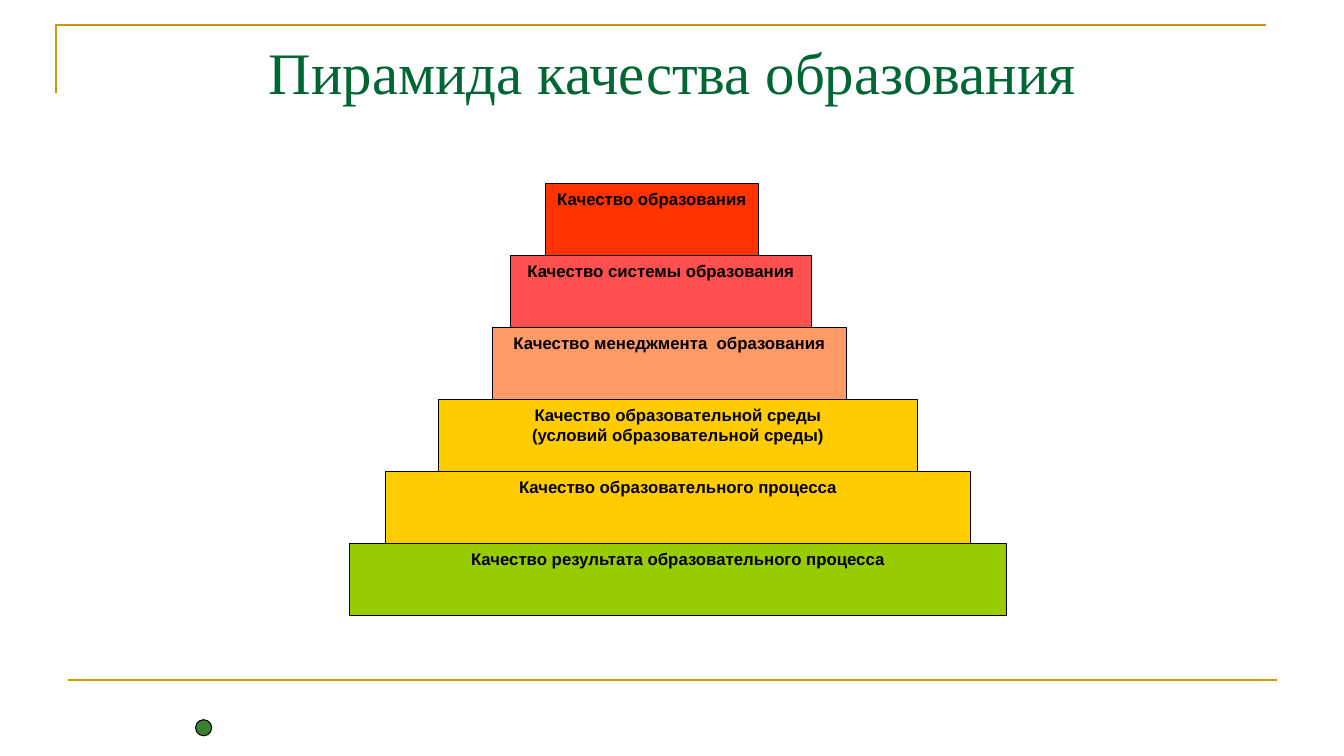
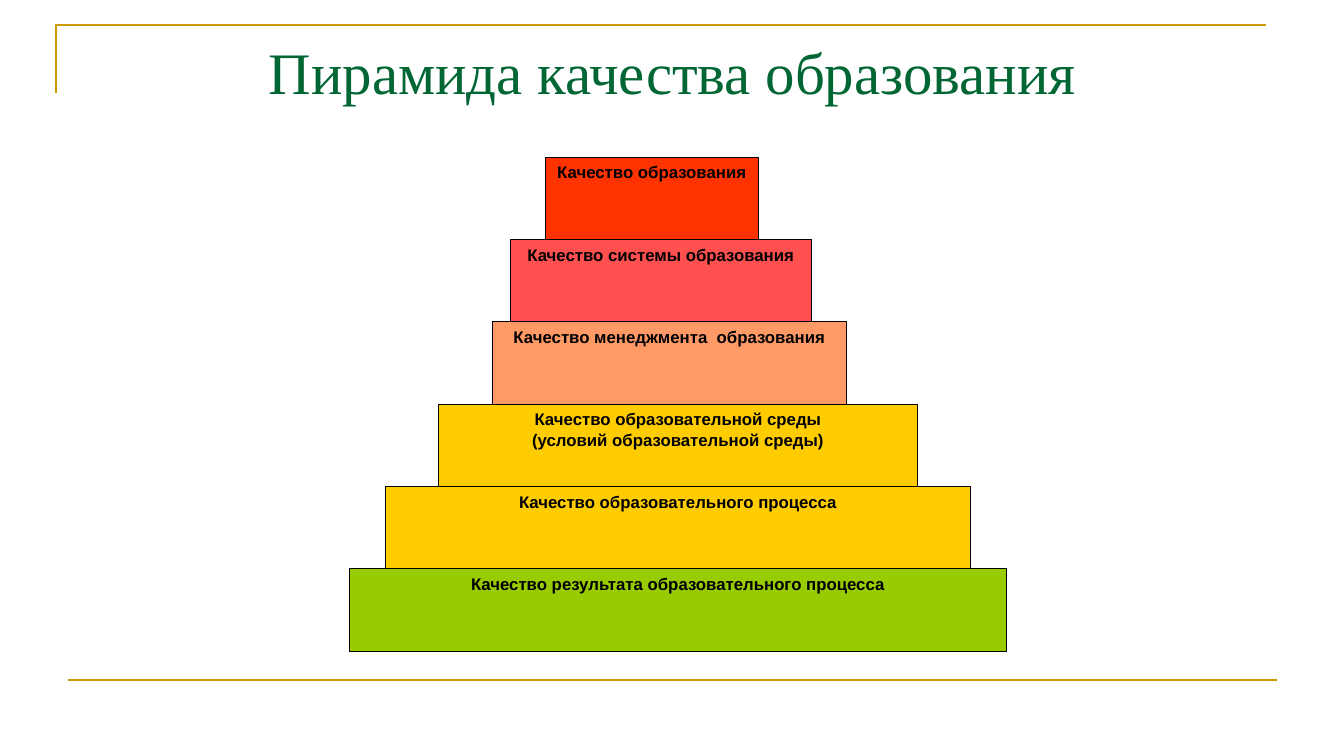
from pptx import Presentation
from pptx.dml.color import RGBColor
from pptx.enum import shapes, text
from pptx.oxml import ns
from pptx.util import Inches, Pt
from lxml import etree

HUES = {
    "gold": "CC9900", "title": "006633", "ink": "000000",
    "red": "FF3300", "rose": "FF5050", "peach": "FF9966",
    "sun": "FFCC00", "lime": "99CC00", "dot": "3B812F",
}
TITLE = "Пирамида качества образования"
STEPS = [
    ("Качество образования", "red", 5.41, 2.11),
    ("Качество системы образования", "rose", 5.06, 2.99),
    ("Качество менеджмента  образования", "peach", 4.88, 3.52),
    ("Качество образовательной среды\n(условий образовательной среды)", "sun", 4.35, 4.75),
    ("Качество образовательного процесса", "sun", 3.82, 5.81),
    ("Качество результата образовательного процесса", "lime", 3.47, 6.51),
]
SLIDES = [
    {"top": 1.82, "end": 6.11, "dot": (1.94, 7.14, 0.16, 0.16)},
    {"top": 1.56, "end": 6.46, "dot": None},
]


def tint(name):
    return RGBColor.from_string(HUES[name])


def write(shape, words, size=12, font="Arial", hue="ink", bold=False):
    frame = shape.text_frame
    frame.word_wrap = True
    frame.vertical_anchor = text.MSO_ANCHOR.TOP
    frame.text = words
    for para in frame.paragraphs:
        para.alignment = text.PP_ALIGN.CENTER
        for run in para.runs:
            run.font.size = Pt(size)
            run.font.name = font
            run.font.bold = bold
            run.font.color.rgb = tint(hue)


def stroke(line, hue, width):
    line.color.rgb = tint(hue)
    line.width = Pt(width)


def block(slide, kind, box, hue):
    shape = slide.shapes.add_shape(kind, *map(Inches, box))
    shape.shadow.inherit = False
    shape.fill.solid()
    shape.fill.fore_color.rgb = tint(hue)
    stroke(shape.line, "ink", 0.75)
    return shape


def frame(slide):
    path = slide.shapes.build_freeform(Inches(0.56), Inches(0.92))
    path.add_line_segments(
        [(Inches(0.56), Inches(0.25)), (Inches(12.56), Inches(0.25))], close=False)
    edge = path.convert_to_shape()
    edge.shadow.inherit = False
    edge.fill.background()
    stroke(edge.line, "gold", 1.5)
    rule = slide.shapes.add_connector(
        shapes.MSO_CONNECTOR.STRAIGHT, *map(Inches, (0.67, 6.75, 12.67, 6.75)))
    stroke(rule.line, "gold", 1.5)
    etree.SubElement(rule._element.spPr, ns.qn("a:effectLst"))
    head = slide.shapes.add_textbox(*map(Inches, (0.67, 0.3, 12, 1.25)))
    write(head, TITLE, size=42, font="Times New Roman", hue="title")


def stack(slide, top, end):
    high = (end - top) / len(STEPS)
    for row, (words, hue, left, wide) in enumerate(STEPS):
        box = (left, top + row * high, wide, high)
        step = block(slide, shapes.MSO_SHAPE.RECTANGLE, box, hue)
        write(step, words, bold=True)


def main():
    deck = Presentation()
    deck.slide_width, deck.slide_height = Inches(13.33), Inches(7.5)
    for plan in SLIDES:
        slide = deck.slides.add_slide(deck.slide_layouts[6])
        frame(slide)
        stack(slide, plan["top"], plan["end"])
        if plan["dot"]:
            block(slide, shapes.MSO_SHAPE.OVAL, plan["dot"], "dot")
    deck.save("out.pptx")


if __name__ == "__main__":
    main()
